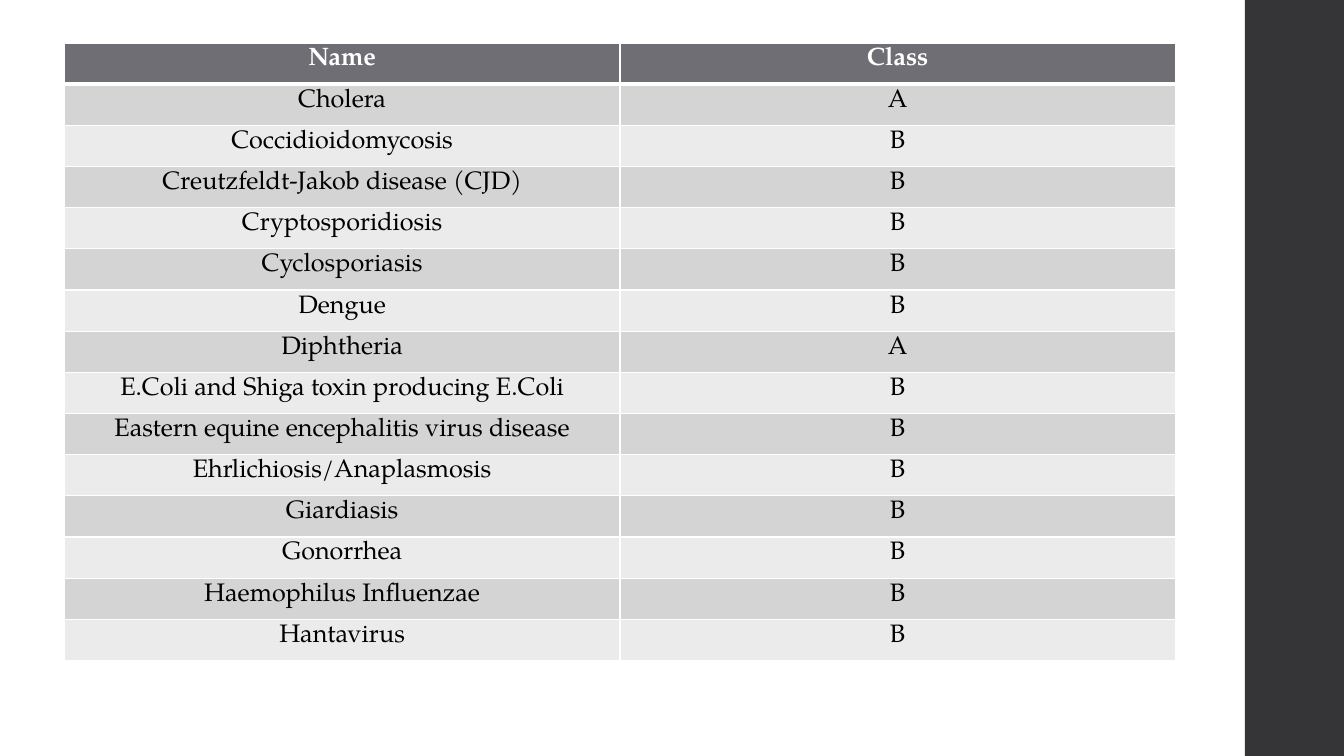
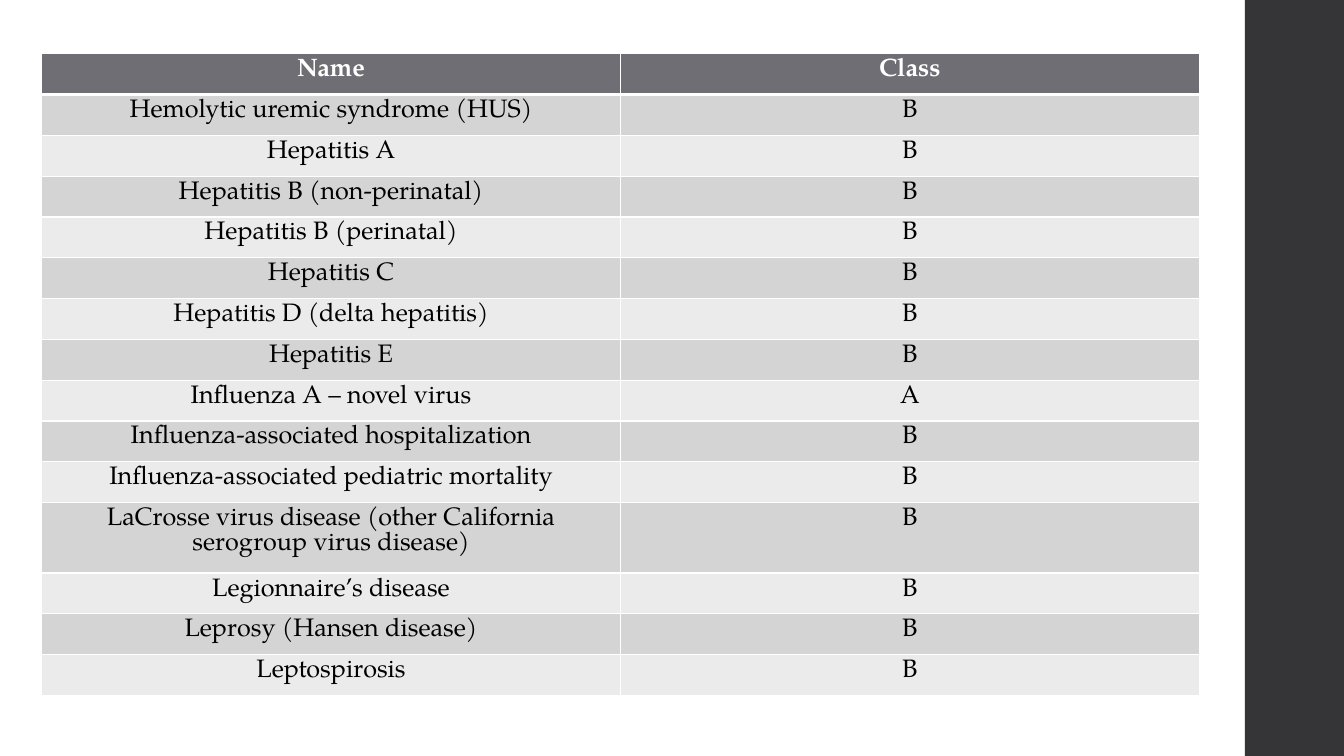
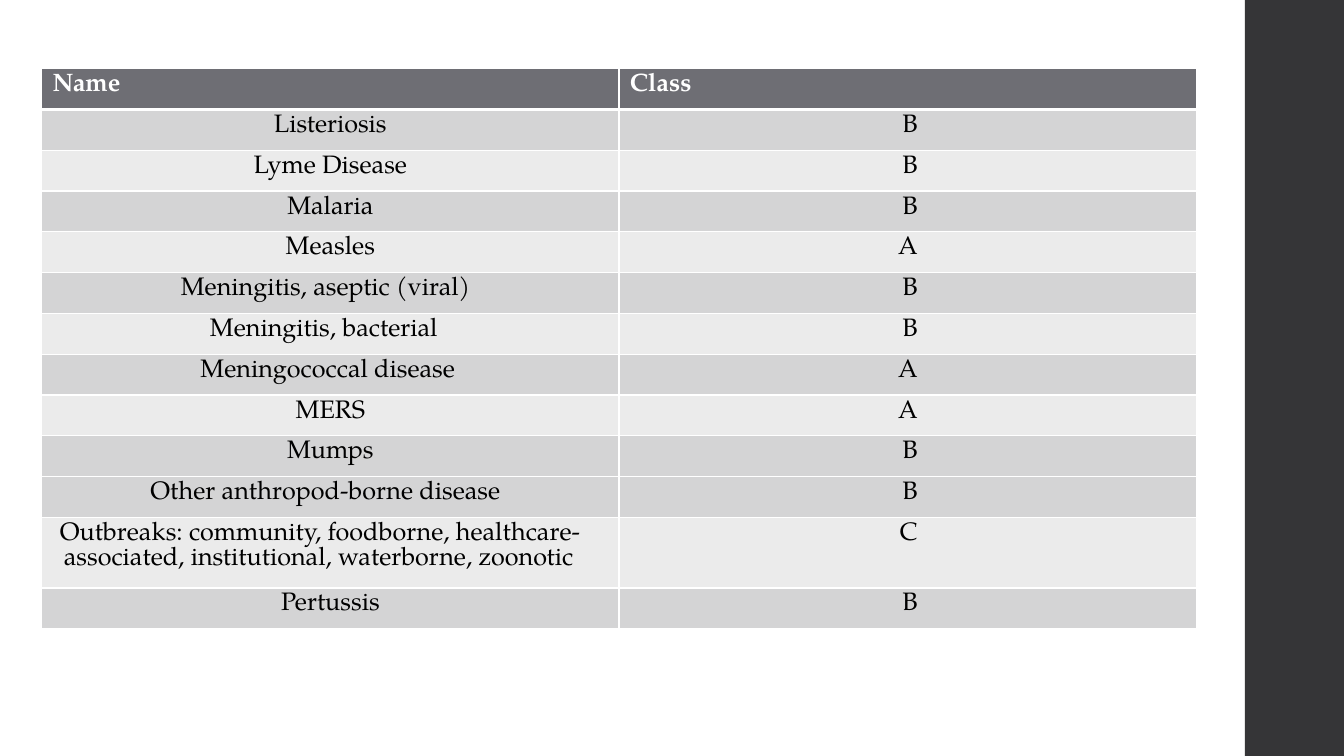
from dataclasses import dataclass

from lxml import etree
from pptx import Presentation
from pptx.dml.color import RGBColor
from pptx.enum import shapes, text
from pptx.oxml import ns
from pptx.util import Pt

HUES = {
    "band": "353537",
    "head": "6E6E74",
    "dark": "D4D4D5",
    "light": "EBEBEB",
    "line": "FFFFFF",
    "white": "FFFFFF",
    "ink": "000000",
}
FONT = "TeX Gyre Pagella"
SIZE = 18
WIDE, HIGH = 960, 540
BAND = 70.8
TALL = 50.4
MID, LEFT, RIGHT = text.PP_ALIGN.CENTER, text.PP_ALIGN.LEFT, text.PP_ALIGN.RIGHT


@dataclass
class Row:
    """A disease and its class; a set indent makes the name left-aligned."""
    name: str
    rank: str = "B"
    indent: float = 0
    hang: float = 0
    tall: bool = False


@dataclass
class Sheet:
    """A slide's table; from row number shift on, the shading swaps."""
    left: float
    top: float
    col: float
    row: float
    rows: list[Row]
    head: float = 0
    inset: float = 0
    shift: int = 99


@dataclass
class Look:
    fill: str
    ink: str = "ink"
    bold: bool = False
    above: float = 1
    below: float = 1


SHEETS = [
    Sheet(46, 30.8, 396.8, 29.42, [
        Row("Cholera", "A"),
        Row("Coccidioidomycosis"),
        Row("Creutzfeldt-Jakob disease (CJD)"),
        Row("Cryptosporidiosis"),
        Row("Cyclosporiasis"),
        Row("Dengue"),
        Row("Diphtheria", "A"),
        Row("E.Coli and Shiga toxin producing E.Coli"),
        Row("Eastern equine encephalitis virus disease"),
        Row("Ehrlichiosis/Anaplasmosis"),
        Row("Giardiasis"),
        Row("Gonorrhea"),
        Row("Haemophilus Influenzae"),
        Row("Hantavirus"),
    ]),
    Sheet(29.8, 38.4, 413.4, 29.16, [
        Row("Hemolytic uremic syndrome (HUS)"),
        Row("Hepatitis A"),
        Row("Hepatitis B (non-perinatal)"),
        Row("Hepatitis B (perinatal)"),
        Row("Hepatitis C"),
        Row("Hepatitis D (delta hepatitis)"),
        Row("Hepatitis E"),
        Row("Influenza A – novel virus", "A"),
        Row("Influenza-associated hospitalization"),
        Row("Influenza-associated pediatric mortality"),
        Row("LaCrosse virus disease (other California\nserogroup virus disease)",
            tall=True),
        Row("Legionnaire’s disease"),
        Row("Leprosy (Hansen disease)"),
        Row("Leptospirosis"),
    ]),
    Sheet(29.8, 49, 412.4, 29.16, [
        Row("Listeriosis"),
        Row("Lyme Disease"),
        Row("Malaria"),
        Row("Measles", "A"),
        Row("Meningitis, aseptic (viral)", indent=99.4),
        Row("Meningitis, bacterial", indent=120.2),
        Row("Meningococcal disease", "A", indent=113.4),
        Row("MERS", "A"),
        Row("Mumps"),
        Row("Other anthropod-borne disease", indent=77.6),
        Row("Outbreaks: community, foodborne, healthcare- associated, "
            "institutional, waterborne, zoonotic", "C", 15.8, -2.9, True),
        Row("Pertussis"),
    ], head=7.8, inset=199, shift=9),
]


def rgb(key: str) -> RGBColor:
    return RGBColor.from_string(HUES[key])


def edge(cell, look: Look) -> None:
    """Draw the four borders of a cell."""
    props = cell._tc.get_or_add_tcPr()
    for side, width in zip("LRTB", (1, 1, look.above, look.below)):
        line = etree.SubElement(props, ns.qn(f"a:ln{side}"), w=str(Pt(width)))
        fill = etree.SubElement(line, ns.qn("a:solidFill"))
        etree.SubElement(fill, ns.qn("a:srgbClr"), val=HUES["line"])


def write(cell, words: str, look: Look, align=MID, indent: float = 0,
          hang: float = 0, inset: float = 0) -> None:
    edge(cell, look)
    cell.fill.solid()
    cell.fill.fore_color.rgb = rgb(look.fill)
    cell.margin_left = cell.margin_bottom = 0
    cell.margin_right = Pt(inset)
    cell.margin_top = Pt(3.4)
    cell.text_frame.text = words
    for i, para in enumerate(cell.text_frame.paragraphs):
        para.alignment = align
        para.space_before = Pt(0 if i else 3.4)
        props = para._p.get_or_add_pPr()
        props.set("marL", str(Pt(indent)))
        props.set("indent", str(Pt(hang)))
        for run in para.runs:
            font = run.font
            font.name, font.size, font.bold = FONT, Pt(SIZE), look.bold
            font.color.rgb = rgb(look.ink)


def side(slide) -> None:
    """Draw the dark band at the right edge."""
    band = slide.shapes.add_shape(shapes.MSO_SHAPE.RECTANGLE, Pt(WIDE - BAND), 0,
                                  Pt(BAND), Pt(HIGH))
    band.shadow.inherit = False
    band.fill.solid()
    band.fill.fore_color.rgb = rgb("band")
    band.line.fill.background()


def grid(slide, sheet: Sheet) -> None:
    highs = [sheet.row] + [TALL if r.tall else sheet.row for r in sheet.rows]
    table = slide.shapes.add_table(len(highs), 2, Pt(sheet.left), Pt(sheet.top),
                                   Pt(2 * sheet.col), Pt(sum(highs))).table
    table.horz_banding = False
    for col in table.columns:
        col.width = Pt(sheet.col)
    for row, high in zip(table.rows, highs):
        row.height = Pt(high)

    top = Look("head", "white", True, below=3)
    for i, label in enumerate(("Name", "Class")):
        write(table.cell(0, i), label, top, LEFT if sheet.head else MID, sheet.head)

    for i, row in enumerate(sheet.rows):
        pale = (i + (i >= sheet.shift)) % 2
        look = Look("light" if pale else "dark", above=1 if i else 3)
        write(table.cell(i + 1, 0), row.name, look, LEFT if row.indent else MID,
              row.indent, row.hang)
        write(table.cell(i + 1, 1), row.rank, look, RIGHT if sheet.inset else MID,
              inset=sheet.inset)


def main() -> None:
    deck = Presentation()
    deck.slide_width, deck.slide_height = Pt(WIDE), Pt(HIGH)
    for sheet in SHEETS:
        slide = deck.slides.add_slide(deck.slide_layouts[6])
        side(slide)
        grid(slide, sheet)
    deck.save("out.pptx")


if __name__ == "__main__":
    main()
